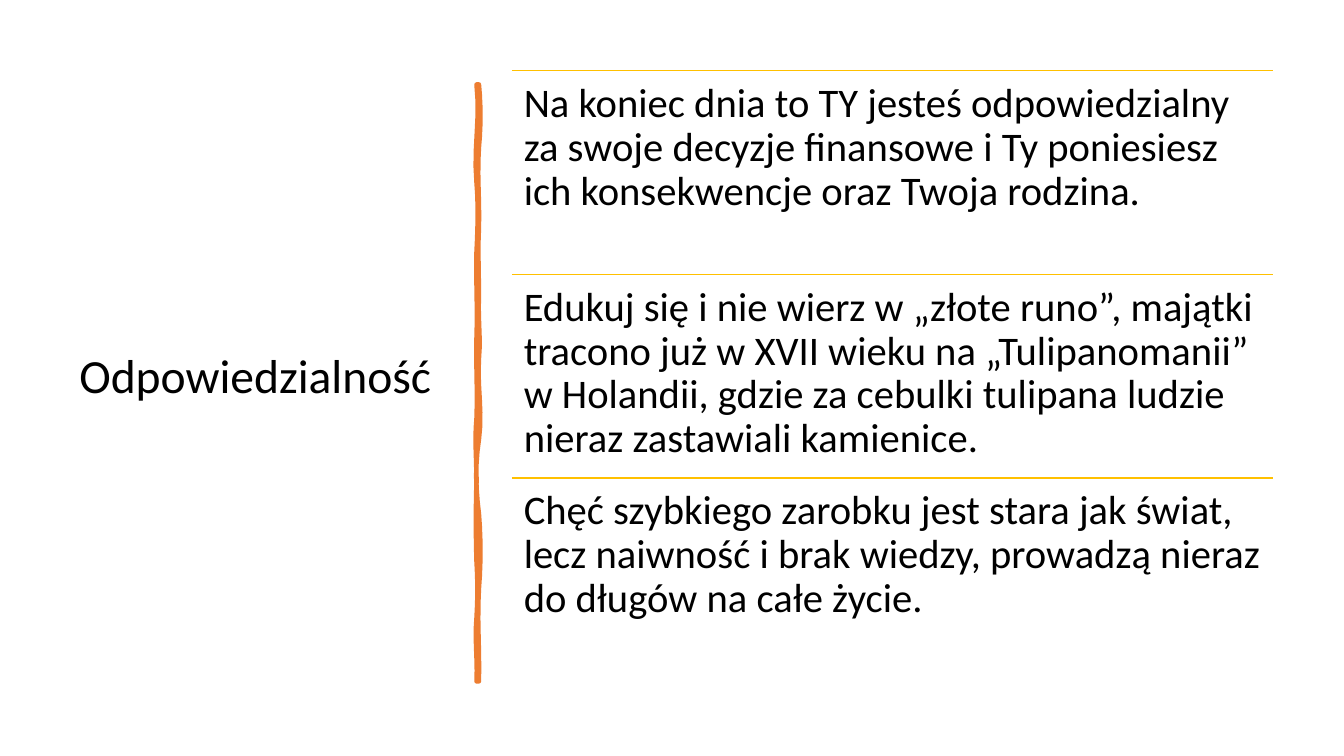
from lxml import etree
from pptx import Presentation
from pptx.dml.color import RGBColor
from pptx.enum.shapes import MSO_CONNECTOR
from pptx.enum.text import MSO_ANCHOR
from pptx.oxml.ns import qn
from pptx.util import Cm, Pt

STRAIGHT = MSO_CONNECTOR.STRAIGHT
TOP, MIDDLE = MSO_ANCHOR.TOP, MSO_ANCHOR.MIDDLE
FONT = "Calibri"
BLACK, ORANGE, GOLD = "000000", "ED7D31", "FFC000"

TITLE = "Odpowiedzialność"
ROWS = [
    "Na koniec dnia to TY jesteś odpowiedzialny za swoje decyzje finansowe "
    "i Ty poniesiesz ich konsekwencje oraz Twoja rodzina.",
    "Edukuj się i nie wierz w „złote runo”, majątki tracono już w XVII wieku "
    "na „Tulipanomanii” w Holandii, gdzie za cebulki tulipana ludzie nieraz "
    "zastawiali kamienice.",
    "Chęć szybkiego zarobku jest stara jak świat, lecz naiwność i brak wiedzy, "
    "prowadzą nieraz do długów na całe życie.",
]
LEFT, START, WIDTH, STEP = 12.9, 1.78, 19.18, 5.13

# Brush edges in cm: base x, first y, then (bend, bend, next y)
RIGHT = (12.07, 2.13, [
    (0.05, 0.05, 3.71), (-0.05, 0.02, 5.74), (-0.03, 0, 7.47),
    (-0.03, 0.05, 9.04), (-0.05, 0.1, 11.07), (-0.1, -0.08, 12.95),
    (0.05, 0.05, 14.83), (-0.05, 0.02, 17.17)])
BACK = (12.01, 17.17, [
    (0.03, -0.05, 15.57), (0.03, 0.03, 14.15), (-0.02, -0.02, 12.12),
    (0, -0.05, 10.54), (0.03, -0.02, 8.51), (0.03, -0.02, 6.35),
    (0.03, 0.05, 4.6), (-0.08, 0.1, 2.13)])


def color(code):
    return RGBColor.from_string(code)


def add_text(slide, box, text, size, anchor, inset):
    shape = slide.shapes.add_textbox(*[Cm(v) for v in box])
    frame = shape.text_frame
    frame.word_wrap = True
    frame.vertical_anchor = anchor
    frame.margin_left = frame.margin_right = Cm(inset)
    frame.margin_top = frame.margin_bottom = Cm(inset)
    para = frame.paragraphs[0]
    para.line_spacing = 0.9
    run = para.add_run()
    run.text = text
    run.font.name = FONT
    run.font.size = Pt(size)
    run.font.color.rgb = color(BLACK)


def add_rule(slide, top):
    line = slide.shapes.add_connector(
        STRAIGHT, Cm(LEFT), Cm(top), Cm(LEFT + WIDTH), Cm(top))
    line.line.color.rgb = color(GOLD)
    line.line.width = Pt(1)
    etree.SubElement(line._element.spPr, qn("a:effectLst"))


def trace(base, top, bends, steps=6):
    """Sample an edge whose cubic curves start and end on the base x."""
    points = [(Cm(base), Cm(top))]
    for one, two, end in bends:
        for i in range(1, steps + 1):
            t = i / steps
            x = base + 3 * t * (1 - t) * ((1 - t) * one + t * two)
            points.append((Cm(x), Cm(top + (end - top) * t)))
        top = end
    return points


def add_brush(slide):
    points = trace(*RIGHT) + trace(*BACK)
    pen = slide.shapes.build_freeform(*points[0])
    pen.add_line_segments(points[1:], close=True)
    shape = pen.convert_to_shape()
    shape.shadow.inherit = False
    shape.fill.solid()
    shape.fill.fore_color.rgb = color(ORANGE)
    shape.line.color.rgb = color(ORANGE)
    shape.line.width = Pt(3.25)
    etree.SubElement(shape._element.spPr.find(qn("a:ln")), qn("a:round"))


def main():
    deck = Presentation()
    deck.slide_width, deck.slide_height = Cm(33.87), Cm(19.05)
    slide = deck.slides.add_slide(deck.slide_layouts[6])

    # Title and brush stroke
    add_text(slide, (1.75, 1.78, 9.5, 15.52), TITLE, 34, MIDDLE, 0.25)
    add_brush(slide)

    # Ruled statements
    for i, text in enumerate(ROWS):
        top = START + i * STEP
        add_rule(slide, top)
        add_text(slide, (LEFT, top, WIDTH, STEP), text, 29, TOP, 0.3)

    deck.save("out.pptx")


if __name__ == "__main__":
    main()
